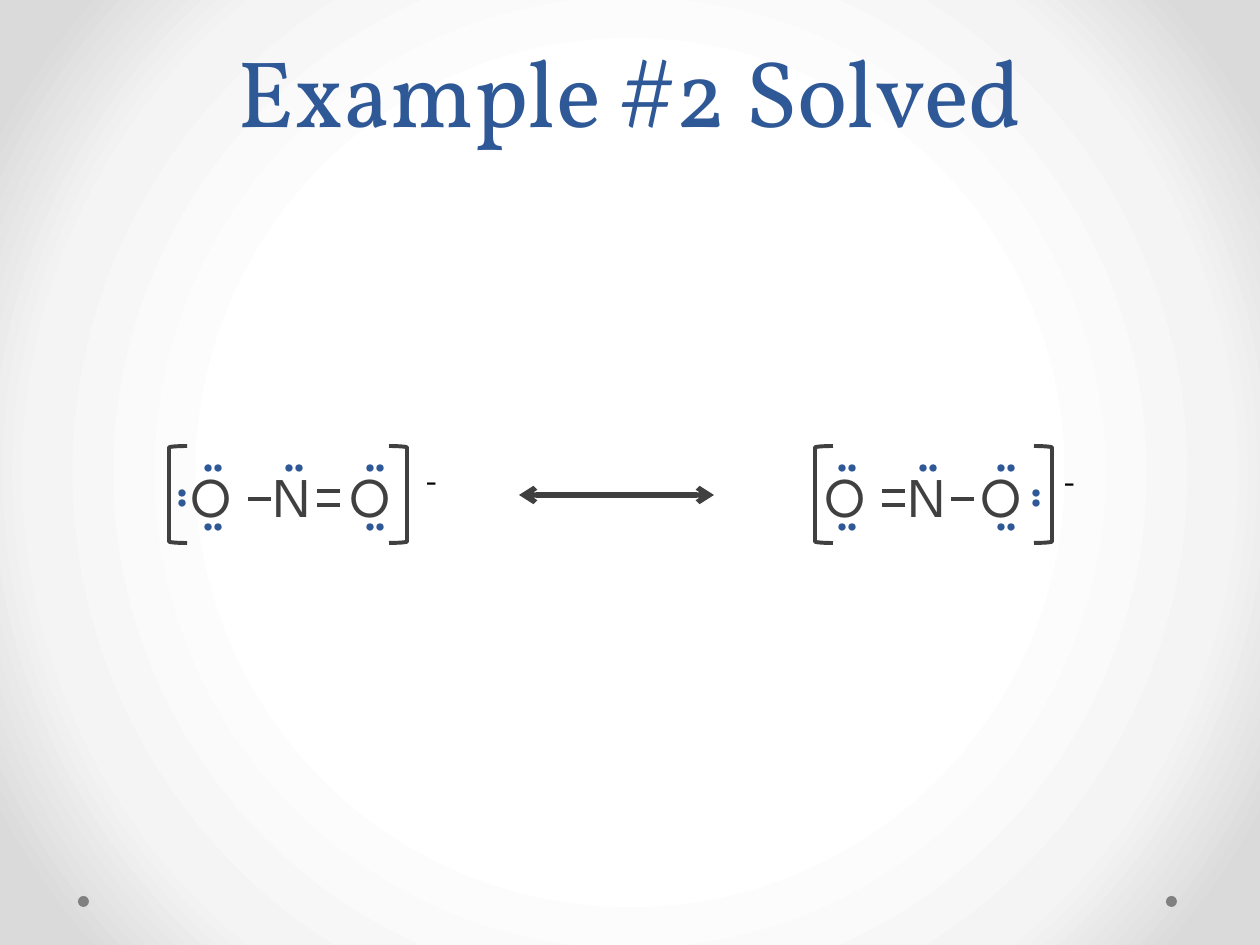
"""Build the "Example #2 Solved" slide with two bracketed structures and a double arrow."""
from dataclasses import dataclass

from lxml.etree import SubElement
from pptx import Presentation
from pptx.dml.color import RGBColor
from pptx.enum.shapes import MSO_CONNECTOR as Connector, MSO_SHAPE as Preset
from pptx.enum.text import MSO_ANCHOR as Anchor, MSO_AUTO_SIZE as AutoSize, PP_ALIGN as Align
from pptx.oxml import parse_xml
from pptx.oxml.ns import nsdecls, qn
from pptx.util import Emu, Pt

COLORS = {"blue": "2F5897", "ink": "404040", "black": "000000", "corner": "808080"}
GRADIENT = {50: "FFFFFF", 76: "F4F4F4", 92: "DADADA"}
TITLE_FONT, LETTER_FONT = "Vollkorn", "League Spartan"
DOT_SIZE, DOT_GAP, BOND_LENGTH = 6, 10, 23
DOT_ROWS = {"above": 465, "below": 524}
BOND_ROWS = {1: (499,), 2: (491, 505)}


@dataclass(frozen=True)
class Letter:
    symbol: str
    left: int
    width: int
    pair_left: int
    pair_rows: tuple[str, ...]


@dataclass(frozen=True)
class Bond:
    left: int
    order: int


@dataclass(frozen=True)
class Structure:
    letters: tuple[Letter, ...]
    bonds: tuple[Bond, ...]
    side_pair_left: int
    bracket_lefts: tuple[int, int]
    minus_left: int
    minus_top: int


BOTH = ("above", "below")
STRUCTURES = (
    Structure(
        (Letter("O", 179, 74, 205, BOTH), Letter("N", 261, 57, 286, ("above",)), Letter("O", 338, 74, 367, BOTH)),
        (Bond(248, 1), Bond(317, 2)), 179, (169, 389), 413, 446),
    Structure(
        (Letter("O", 813, 74, 839, BOTH), Letter("N", 896, 57, 920, ("above",)), Letter("O", 969, 74, 998, BOTH)),
        (Bond(882, 2), Bond(951, 1)), 1033, (815, 1034), 1051, 447),
)


def px(value: int) -> Emu:
    return Emu(round(value * 914400 / 126))


def color(name: str) -> RGBColor:
    return RGBColor.from_string(COLORS[name])


def set_background(slide) -> None:
    stops = "".join(
        f'<a:gs pos="{position * 1000}"><a:srgbClr val="{value}"/></a:gs>'
        for position, value in GRADIENT.items())
    background = parse_xml(
        f'<p:bg {nsdecls("p", "a")}><p:bgPr><a:gradFill rotWithShape="1"><a:gsLst>{stops}</a:gsLst>'
        '<a:path path="circle"><a:fillToRect l="50000" t="50000" r="50000" b="50000"/></a:path>'
        '</a:gradFill><a:effectLst/></p:bgPr></p:bg>')
    slide.element.cSld.insert(0, background)


def add_title(slide, text: str) -> None:
    title = slide.shapes.title
    title.left, title.top, title.width, title.height = px(63), px(0), px(1134), px(153)
    frame = title.text_frame
    frame.text = text
    frame.vertical_anchor = Anchor.BOTTOM
    frame.auto_size = AutoSize.NONE
    paragraph = frame.paragraphs[0]
    paragraph.alignment = Align.CENTER
    paragraph.line_spacing = Pt(58)
    font = paragraph.runs[0].font
    font.name, font.size = TITLE_FONT, Pt(54)
    font.color.rgb = color("blue")


def add_label(shapes, text: str, left: int, top: int, width: int, height: int, ink: str):
    box = shapes.add_textbox(px(left), px(top), px(width), px(height))
    frame = box.text_frame
    frame.text = text
    frame.word_wrap = True
    font = frame.paragraphs[0].runs[0].font
    font.name, font.size = LETTER_FONT, Pt(32)
    font.color.rgb = color(ink)
    return font


def add_dot(shapes, left: int, top: int, size: int, fill: str, outlined: bool) -> None:
    dot = shapes.add_shape(Preset.OVAL, px(left), px(top), px(size), px(size))
    dot.shadow.inherit = False
    dot.fill.solid()
    dot.fill.fore_color.rgb = color(fill)
    if outlined:
        dot.line.color.rgb = color(fill)
        dot.line.width = Pt(0.75)
    else:
        dot.line.fill.background()


def add_pair(shapes, left: int, top: int, vertical: bool = False) -> None:
    for step in (0, DOT_GAP):
        x, y = (left, top + step) if vertical else (left + step, top)
        add_dot(shapes, x, y, DOT_SIZE, "blue", True)


def add_line(shapes, left: int, right: int, y: int, weight: float):
    line = shapes.add_connector(Connector.STRAIGHT, px(left), px(y), px(right), px(y))
    line.line.color.rgb = color("ink")
    line.line.width = Pt(weight)
    SubElement(line.element.spPr, qn("a:effectLst"))
    return line


def add_double_arrow(shapes) -> None:
    outline = add_line(shapes, 519, 714, 495, 3).line
    stroke = outline._get_or_add_ln()
    for end in ("a:headEnd", "a:tailEnd"):
        SubElement(stroke, qn(end), type="arrow")


def add_structure(slide, structure: Structure) -> None:
    shapes = slide.shapes.add_group_shape().shapes
    for letter in structure.letters:
        add_label(shapes, letter.symbol, letter.left, 455, letter.width, 81, "ink")
        for row in letter.pair_rows:
            add_pair(shapes, letter.pair_left, DOT_ROWS[row])
    for bond in structure.bonds:
        for y in BOND_ROWS[bond.order]:
            add_line(shapes, bond.left, bond.left + BOND_LENGTH, y, 2.25)
    add_pair(shapes, structure.side_pair_left, 490, vertical=True)
    for preset, left in zip((Preset.LEFT_BRACKET, Preset.RIGHT_BRACKET), structure.bracket_lefts):
        bracket = shapes.add_shape(preset, px(left), px(446), px(18), px(97))
        bracket.shadow.inherit = False
        bracket.fill.background()
        bracket.line.color.rgb = color("ink")
        bracket.line.width = Pt(2.25)
    minus = add_label(slide.shapes, "-", structure.minus_left, structure.minus_top, 35, 58, "black")
    minus._element.set("baseline", "30000")


def main() -> None:
    presentation = Presentation()
    presentation.slide_width, presentation.slide_height = px(1260), px(945)
    slide = presentation.slides.add_slide(presentation.slide_layouts[5])
    set_background(slide)
    for left in (78, 1166):
        add_dot(slide.shapes, left, 896, 11, "corner", False)
    add_title(slide, "Example #2 Solved")
    add_double_arrow(slide.shapes)
    for structure in STRUCTURES:
        add_structure(slide, structure)
    presentation.save("out.pptx")


if __name__ == "__main__":
    main()
